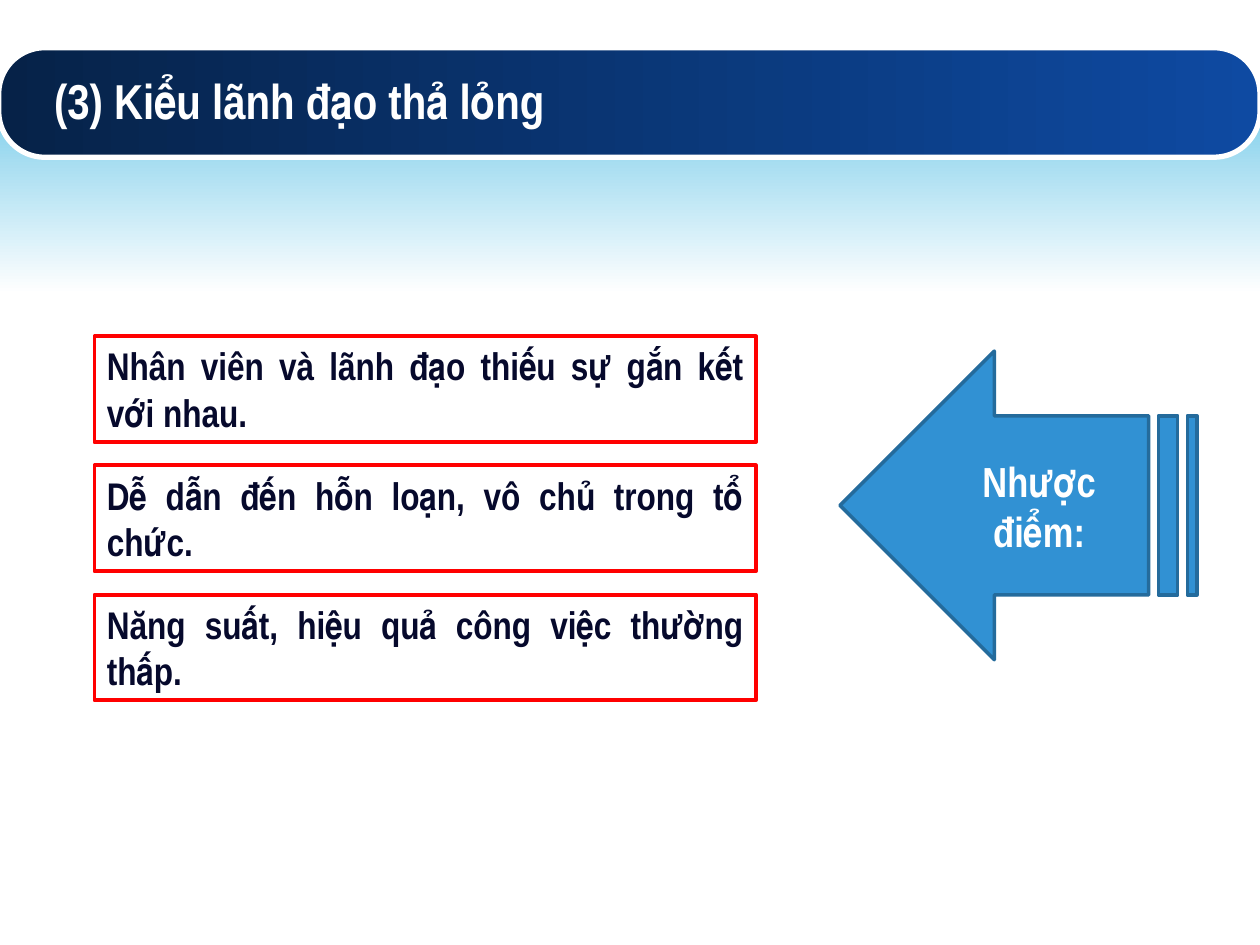
from pptx import Presentation
from pptx.dml.color import RGBColor
from pptx.enum.shapes import MSO_SHAPE
from pptx.enum.text import MSO_ANCHOR, PP_ALIGN
from pptx.util import Pt

RECTANGLE = MSO_SHAPE.RECTANGLE
ROUNDED = MSO_SHAPE.ROUNDED_RECTANGLE
STRIPED_ARROW = MSO_SHAPE.STRIPED_RIGHT_ARROW
TOP, MIDDLE = MSO_ANCHOR.TOP, MSO_ANCHOR.MIDDLE
LEFT, CENTER, JUSTIFY = PP_ALIGN.LEFT, PP_ALIGN.CENTER, PP_ALIGN.JUSTIFY

WHITE = RGBColor(0xFF, 0xFF, 0xFF)
SKY = RGBColor(0x81, 0xCF, 0xEB)
NAVY = RGBColor(0x06, 0x22, 0x48)
ROYAL = RGBColor(0x0E, 0x4A, 0xA2)
BLUE = RGBColor(0x31, 0x91, 0xD3)
BLUE_EDGE = RGBColor(0x24, 0x6B, 0x9C)
RED = RGBColor(0xFF, 0x00, 0x00)
INK = RGBColor(0x06, 0x09, 0x2C)

DRAWBACKS = [
    "Nhân viên và lãnh đạo thiếu sự gắn kết với nhau.",
    "Dễ dẫn đến hỗn loạn, vô chủ trong tổ chức.",
    "Năng suất, hiệu quả công việc thường thấp.",
]
FIRST_TOP, PITCH = 192.2, 73.8


class SlideBuilder:
    font_name = "Arial Narrow"

    def __init__(self, slide):
        self.slide = slide

    def shape(self, kind, left, top, width, height, edge=None, edge_width=0):
        """Add an unfilled preset shape without shadow."""
        shape = self.slide.shapes.add_shape(
            kind, Pt(left), Pt(top), Pt(width), Pt(height))
        shape.shadow.inherit = False
        shape.fill.background()
        if edge is None:
            shape.line.fill.background()
        else:
            shape.line.color.rgb = edge
            shape.line.width = Pt(edge_width)
        return shape

    def gradient(self, shape, start, end, angle):
        """Fill with two colours; the angle runs counter-clockwise."""
        shape.fill.gradient()
        shape.fill.gradient_angle = angle
        for stop, color in zip(shape.fill.gradient_stops, (start, end)):
            stop.color.rgb = color

    def set_text(self, shape, text, size, color, align, anchor):
        frame = shape.text_frame
        frame.word_wrap = True
        frame.vertical_anchor = anchor
        paragraph = frame.paragraphs[0]
        paragraph.text = text
        paragraph.alignment = align
        font = paragraph.font
        font.name = self.font_name
        font.size = Pt(size)
        font.bold = True
        font.color.rgb = color

    def header(self, text):
        glow = self.shape(RECTANGLE, 0, 60.5, 720, 107.3)
        self.gradient(glow, SKY, WHITE, 270)
        band = self.shape(ROUNDED, -0.7, 27.3, 720.7, 62.6, WHITE, 3)
        band.adjustments[0] = 0.42
        self.gradient(band, NAVY, ROYAL, 0)
        title = self.slide.shapes.add_textbox(
            Pt(23.8), Pt(29.5), Pt(684), Pt(54.7))
        self.set_text(title, text, 28, WHITE, LEFT, MIDDLE)

    def left_arrow(self, text):
        arrow = self.shape(STRIPED_ARROW, 480, 200.6, 204, 176.4, BLUE_EDGE, 2)
        arrow.adjustments[0] = 0.58
        arrow.adjustments[1] = 0.5
        arrow.fill.solid()
        arrow.fill.fore_color.rgb = BLUE
        arrow._element.spPr.xfrm.set("flipH", "1")
        self.set_text(arrow, text, 24, WHITE, CENTER, MIDDLE)

    def drawback(self, top, text):
        box = self.shape(RECTANGLE, 54, top, 378, 60.5, RED, 2.25)
        self.set_text(box, text, 22, INK, JUSTIFY, TOP)


def main():
    deck = Presentation()
    deck.slide_width, deck.slide_height = Pt(720), Pt(540)
    builder = SlideBuilder(deck.slides.add_slide(deck.slide_layouts[6]))
    builder.header("(3) Kiểu lãnh đạo thả lỏng")
    builder.left_arrow("Nhược điểm:")
    for row, text in enumerate(DRAWBACKS):
        builder.drawback(FIRST_TOP + row * PITCH, text)
    deck.save("out.pptx")


if __name__ == "__main__":
    main()
